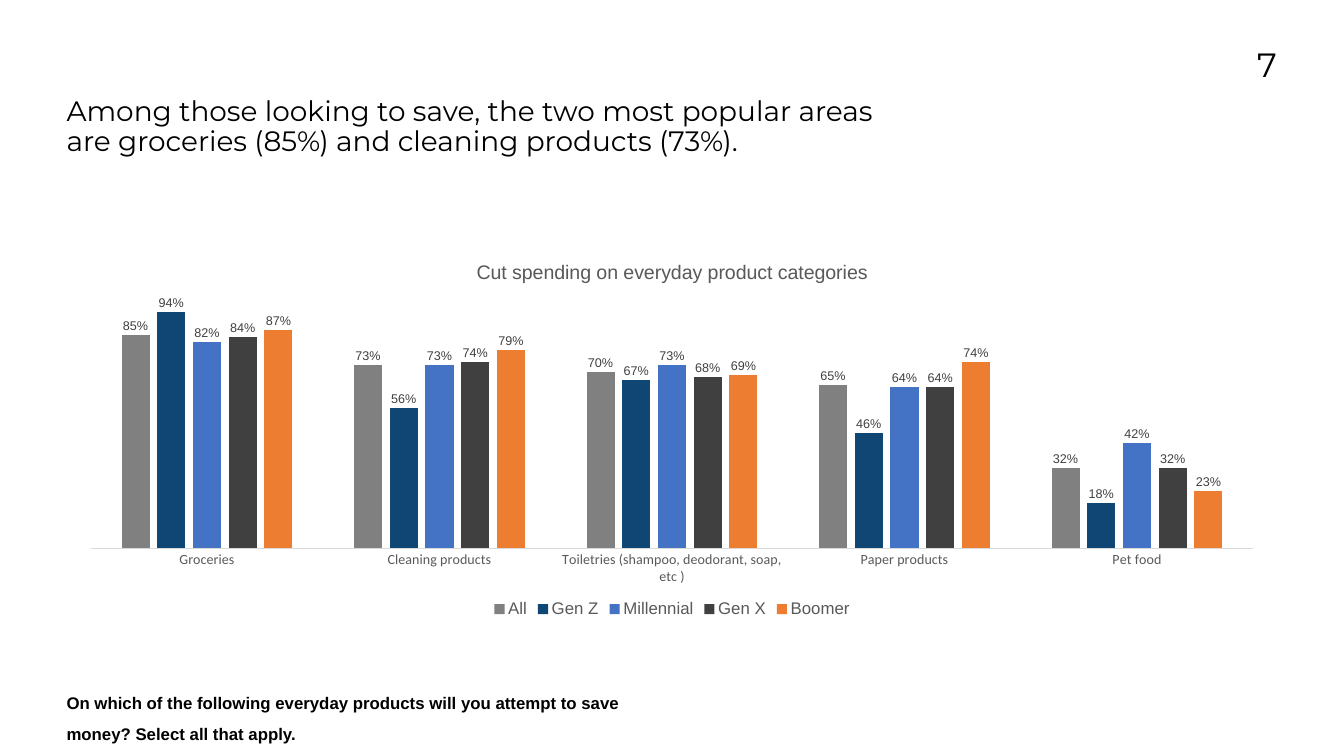
from dataclasses import dataclass

from pptx import Presentation
from pptx.chart.data import CategoryChartData
from pptx.dml.color import RGBColor
from pptx.enum import chart as ch, text
from pptx.util import Inches, Pt


@dataclass(frozen=True)
class Theme:
    heading_font: str = "Montserrat"
    body_font: str = "Arial"
    axis_font: str = "Calibri"
    ink: str = "000000"
    muted: str = "595959"
    label: str = "404040"
    rule: str = "D9D9D9"
    page_size: int = 48
    headline_size: int = 40
    chart_title_size: int = 28
    body_size: int = 24
    axis_size: int = 20
    label_size: int = 18


THEME = Theme()
CATEGORIES = ["Groceries", "Cleaning products",
              "Toiletries (shampoo, deodorant, soap, etc )",
              "Paper products", "Pet food"]
GENERATIONS = {
    "All": ("808080", (0.85, 0.73, 0.70, 0.65, 0.32)),
    "Gen Z": ("104674", (0.94, 0.56, 0.67, 0.46, 0.18)),
    "Millennial": ("4472C4", (0.82, 0.73, 0.73, 0.64, 0.42)),
    "Gen X": ("404040", (0.84, 0.74, 0.68, 0.64, 0.32)),
    "Boomer": ("ED7D31", (0.87, 0.79, 0.69, 0.74, 0.23)),
}


def set_all(target, **values):
    for name, value in values.items():
        setattr(target, name, value)


def set_font(font, name, size, color, bold=False):
    set_all(font, name=name, size=Pt(size), bold=bold)
    font.color.rgb = RGBColor.from_string(color)


def add_copy(slide, box, words, font, size, bold=False,
             align=text.PP_ALIGN.LEFT, spacing=1.0):
    frame = slide.shapes.add_textbox(*map(Inches, box)).text_frame
    set_all(frame, word_wrap=True, vertical_anchor=text.MSO_ANCHOR.TOP,
            margin_left=0, margin_top=0, margin_right=0, margin_bottom=0)
    paragraph = frame.paragraphs[0]
    set_all(paragraph, alignment=align, line_spacing=spacing)
    run = paragraph.add_run()
    run.text = words
    set_font(run.font, font, size, THEME.ink, bold)


def style_axes(chart):
    categories = chart.category_axis
    set_all(categories, major_tick_mark=ch.XL_TICK_MARK.NONE,
            minor_tick_mark=ch.XL_TICK_MARK.NONE, has_major_gridlines=False)
    set_font(categories.tick_labels.font, THEME.axis_font, THEME.axis_size, THEME.muted)
    categories.format.line.color.rgb = RGBColor.from_string(THEME.rule)
    categories.format.line.width = Pt(0.75)
    set_all(chart.value_axis, visible=False, has_major_gridlines=False,
            minimum_scale=0, maximum_scale=1)


def style_bars(plot):
    set_all(plot, gap_width=219, overlap=-27, vary_by_categories=False)
    for series, (color, _) in zip(plot.series, GENERATIONS.values()):
        series.format.fill.solid()
        series.format.fill.fore_color.rgb = RGBColor.from_string(color)
        labels = series.data_labels
        set_all(labels, show_value=True, number_format="0%",
                number_format_is_linked=False,
                position=ch.XL_LABEL_POSITION.OUTSIDE_END)
        set_font(labels.font, THEME.body_font, THEME.label_size, THEME.label)


def add_spending_chart(slide, box):
    data = CategoryChartData(number_format="0%")
    data.categories = CATEGORIES
    for name, (_, shares) in GENERATIONS.items():
        data.add_series(name, shares)
    chart = slide.shapes.add_chart(
        ch.XL_CHART_TYPE.COLUMN_CLUSTERED, *map(Inches, box), data).chart
    set_font(chart.font, THEME.axis_font, 10, THEME.ink)

    chart.has_title = True
    title = chart.chart_title
    title.include_in_layout = False
    run = title.text_frame.paragraphs[0].add_run()
    run.text = "Cut spending on everyday product categories"
    set_font(run.font, THEME.body_font, THEME.chart_title_size, THEME.muted)

    chart.has_legend = True
    set_all(chart.legend, position=ch.XL_LEGEND_POSITION.BOTTOM,
            include_in_layout=False)
    set_font(chart.legend.font, THEME.body_font, THEME.body_size, THEME.muted)
    style_axes(chart)
    style_bars(chart.plots[0])


def main():
    deck = Presentation()
    set_all(deck, slide_width=Inches(26.67), slide_height=Inches(15))
    slide = deck.slides.add_slide(deck.slide_layouts[6])
    margin = 1.32

    add_copy(slide, (23.09, 0.88, 2.25, 1.64), "7", THEME.heading_font,
             THEME.page_size, align=text.PP_ALIGN.RIGHT)
    add_spending_chart(slide, (margin, 4.88, 26.67 - 2 * margin, 7.46))
    add_copy(slide, (margin, 1.93, 16.01, 2.08),
             "Among those looking to save, the two most popular areas are "
             "groceries (85%) and cleaning products (73%).",
             THEME.heading_font, THEME.headline_size, spacing=0.9)
    add_copy(slide, (margin, 13.55, 12.01, 0.65),
             "On which of the following everyday products will you attempt "
             "to save money? Select all that apply.",
             THEME.body_font, THEME.body_size, bold=True, spacing=1.5)
    deck.save("out.pptx")


if __name__ == "__main__":
    main()
